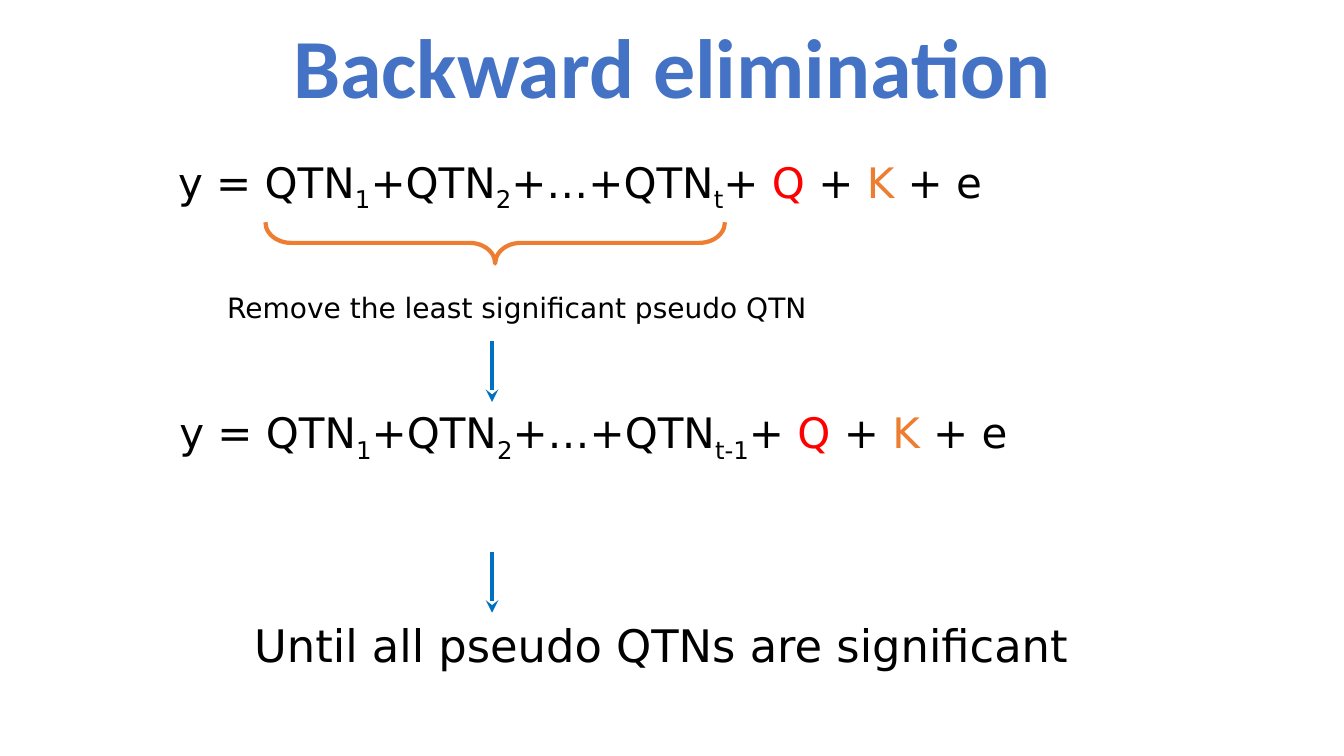
from dataclasses import dataclass

from lxml import etree
from pptx import Presentation
from pptx import util as u
from pptx.dml.color import RGBColor
from pptx.enum import shapes, text
from pptx.oxml import ns


@dataclass(frozen=True)
class Theme:
    title_font: str = "Calibri"
    body_font: str = "DejaVu Sans"
    title: str = "4472C4"
    ink: str = "000000"
    red: str = "FF0000"
    orange: str = "ED7D31"
    arrow: str = "0070C0"
    title_size: int = 60
    closing_size: int = 32
    equation_size: int = 30
    note_size: int = 20
    line_width: int = 3


THEME = Theme()
ARROW_X = 12.4


def add_run(p, content, *, size, font=THEME.body_font, color=THEME.ink,
            bold=False, subscript=False):
    r = p.add_run()
    r.text = content
    r.font.name = font
    r.font.size = u.Pt(size)
    r.font.bold = bold
    r.font.color.rgb = RGBColor.from_string(color)
    if subscript:
        r.font._element.set("baseline", "-25000")


def place(sp, left, top, width, height):
    sp.left, sp.top = u.Cm(left), u.Cm(top)
    sp.width, sp.height = u.Cm(width), u.Cm(height)


def add_title(s, content):
    sp = s.shapes.title
    place(sp, 5.51, 0.2, 22.86, 3.18)
    tf = sp.text_frame
    tf.vertical_anchor = text.MSO_ANCHOR.MIDDLE
    p = tf.paragraphs[0]
    p.alignment = text.PP_ALIGN.CENTER
    p.line_spacing = 0.9
    add_run(p, content, size=THEME.title_size, font=THEME.title_font,
            color=THEME.title, bold=True)


def add_text_box(s, box, align=text.PP_ALIGN.LEFT):
    tf = s.shapes.add_textbox(*map(u.Cm, box)).text_frame
    tf.word_wrap = True
    tf.auto_size = text.MSO_AUTO_SIZE.SHAPE_TO_FIT_TEXT
    p = tf.paragraphs[0]
    p.alignment = align
    return p


def add_centered_text(s, box, content, size):
    add_run(add_text_box(s, box, text.PP_ALIGN.CENTER), content, size=size)


def add_equation(s, box, last_index):
    p = add_text_box(s, box)
    size = THEME.equation_size
    # QTN terms with their subscripts
    for term, index in (("y = QTN", "1"), ("+QTN", "2"), ("+…+QTN", last_index)):
        add_run(p, term, size=size)
        add_run(p, index, size=size, subscript=True)
    # Covariates and residual
    for term, color in (("Q ", THEME.red), ("K ", THEME.orange)):
        add_run(p, "+ ", size=size)
        add_run(p, term, size=size, color=color)
    add_run(p, "+ e", size=size)


def style_line(line, color):
    line.color.rgb = RGBColor.from_string(color)
    line.width = u.Pt(THEME.line_width)


def add_down_arrow(s, top, bottom):
    arrow = s.shapes.add_connector(
        shapes.MSO_CONNECTOR.STRAIGHT,
        u.Cm(ARROW_X), u.Cm(top), u.Cm(ARROW_X), u.Cm(bottom))
    style_line(arrow.line, THEME.arrow)
    etree.SubElement(arrow.line._get_or_add_ln(), ns.qn("a:tailEnd"), type="stealth")
    etree.SubElement(arrow._element.spPr, ns.qn("a:effectLst"))


def add_brace(s, box):
    brace = s.shapes.add_shape(shapes.MSO_SHAPE.LEFT_BRACE, *map(u.Cm, box))
    brace.rotation = 270
    brace.adjustments[0] = 0.62
    brace.adjustments[1] = 0.5
    brace.shadow.inherit = False
    brace.fill.background()
    style_line(brace.line, THEME.orange)


def main():
    prs = Presentation()
    prs.slide_width, prs.slide_height = u.Cm(33.87), u.Cm(19.05)
    s = prs.slides.add_slide(prs.slide_layouts.get_by_name("Title Only"))
    add_title(s, "Backward elimination")

    # Full model and the terms under selection
    add_equation(s, (4.24, 3.81, 25.4, 1.55), "t")
    add_brace(s, (11.96, 0.33, 1.04, 11.58))

    # Removal step and reduced model
    add_centered_text(s, (4.75, 7.19, 16.56, 1.12),
                      "Remove the least significant pseudo QTN", THEME.note_size)
    add_down_arrow(s, 8.59, 10.13)
    add_equation(s, (4.27, 10.13, 25.37, 1.55), "t-1")

    # Stopping rule
    add_down_arrow(s, 13.92, 15.44)
    add_centered_text(s, (4.57, 15.44, 24.21, 1.63),
                      "Until all pseudo QTNs are significant", THEME.closing_size)

    prs.save("out.pptx")


if __name__ == "__main__":
    main()
